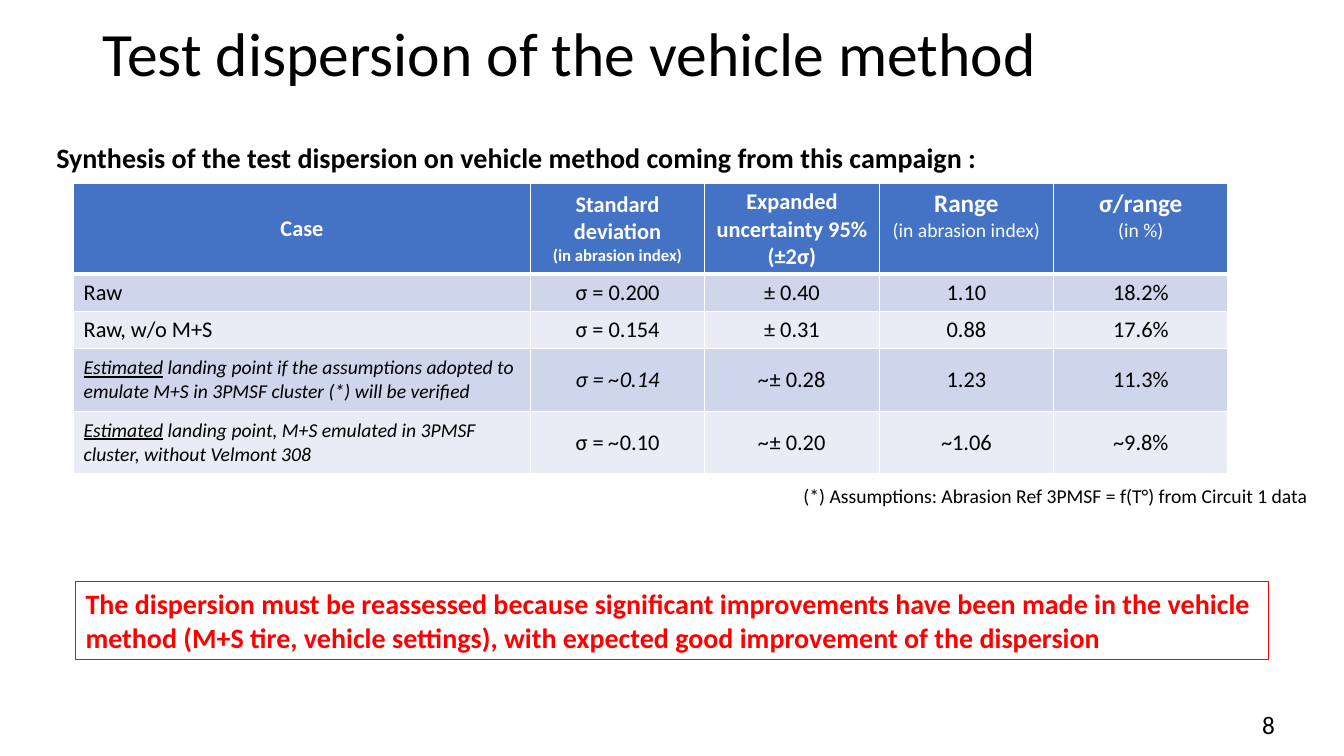
import pptx
import pptx.dml.color
import pptx.enum.shapes
import pptx.enum.text
import pptx.oxml
import pptx.util
from pptx.oxml.ns import nsdecls

WIDTH, HEIGHT = 13.33, 7.5
FONT = "Calibri"
COLOURS = {"ink": "000000", "paper": "FFFFFF", "header": "4472C4",
           "dark band": "CFD5EA", "light band": "E9EBF5", "alert": "FF0000"}
ALIGN = pptx.enum.text.PP_ALIGN
ANCHOR = pptx.enum.text.MSO_ANCHOR
inches = pptx.util.Inches

COLUMNS = [4.53] + [1.73] * 4
ROWS = [0.89, 0.37, 0.37, 0.62, 0.62]

# Each header is a list of lines: (text, size, bold)
HEADERS = [
    [("Case", 16, True)],
    [("Standard deviation", 16, True), ("(in abrasion index)", 12, True)],
    [("Expanded uncertainty 95%", 16, True), ("(±2σ)", 16, True)],
    [("Range", 18, True), ("(in abrasion index)", 14, False)],
    [("σ/range", 18, True), ("(in %)", 14, False)],
]
# A cell is a list of spans: (text, style letters)
CASES = [
    [[("Raw", "")], [("σ = 0.200", "")], [("± 0.40", "")], [("1.10", "")], [("18.2%", "")]],
    [[("Raw, w/o M+S", "")], [("σ = 0.154", "")], [("± 0.31", "")], [("0.88", "")],
     [("17.6%", "")]],
    [[("Estimated", "iu"), (" landing point if the assumptions adopted to emulate M+S "
                            "in 3PMSF cluster (*) will be verified", "i")],
     [("σ = ~0.14", "i")], [("~", "i"), ("± 0.28", "")], [("1.23", "")], [("11.3%", "")]],
    [[("Estimated", "iu"), (" landing point, M+S emulated in 3PMSF cluster, "
                            "without Velmont 308", "i")],
     [("σ = ", ""), ("~", "i"), ("0.10", "")], [("~", "i"), ("± 0.20", "")],
     [("~1.06", "")], [("~9.8%", "")]],
]


def rgb(name):
    return pptx.dml.color.RGBColor.from_string(COLOURS[name])


def style(span, size, colour="ink", bold=False, italic=False, underline=False):
    font = span.font
    font.name, font.size = FONT, pptx.util.Pt(size)
    font.bold, font.italic, font.underline = bold, italic, underline
    font.color.rgb = rgb(colour)


def add_text(page, area, text, size, colour="ink", bold=False, framed=False,
             anchor=ANCHOR.TOP, spacing=1.0):
    """Place one paragraph in an area given in inches."""
    place = [inches(value) for value in area]
    if framed:
        box = page.shapes.add_shape(pptx.enum.shapes.MSO_SHAPE.RECTANGLE, *place)
        box.shadow.inherit = False
        box.fill.background()
        box.line.color.rgb = rgb(colour)
        box.line.width = pptx.util.Pt(0.75)
    else:
        box = page.shapes.add_textbox(*place)
    frame = box.text_frame
    frame.text = text
    frame.word_wrap = True
    frame.vertical_anchor = anchor
    para = frame.paragraphs[0]
    para.alignment = ALIGN.LEFT
    para.line_spacing = spacing
    style(para.runs[0], size, colour, bold)


def set_borders(cell, row):
    """White rules all round, with a heavier one below the header row."""
    properties = cell._tc.get_or_add_tcPr()
    heavy = {0: "B", 1: "T"}.get(row)
    for index, side in enumerate("LRTB"):
        points = 3 if side == heavy else 1
        properties.insert(index, pptx.oxml.parse_xml(
            f'<a:ln{side} {nsdecls("a")} w="{pptx.util.Pt(points)}"><a:solidFill>'
            f'<a:srgbClr val="{COLOURS["paper"]}"/></a:solidFill></a:ln{side}>'))


def paint_cell(cell, row, colour, anchor):
    cell.fill.solid()
    cell.fill.fore_color.rgb = rgb(colour)
    cell.vertical_anchor = anchor
    set_borders(cell, row)


def fill_header(cell, column):
    lines = HEADERS[column]
    paint_cell(cell, 0, "header", ANCHOR.MIDDLE if column < 3 else ANCHOR.TOP)
    cell.text_frame.text = "\n".join(text for text, _, _ in lines)
    for para, (_, size, bold) in zip(cell.text_frame.paragraphs, lines):
        para.alignment = ALIGN.CENTER
        style(para.runs[0], size, "paper", bold)


def fill_case(cell, row, column, spans):
    paint_cell(cell, row, "dark band" if row % 2 else "light band", ANCHOR.MIDDLE)
    para = cell.text_frame.paragraphs[0]
    para.alignment = ALIGN.CENTER if column else ALIGN.LEFT
    size = 14 if column == 0 and len(spans) > 1 else 16
    for text, letters in spans:
        span = para.add_run()
        span.text = text
        style(span, size, italic="i" in letters, underline="u" in letters)


def add_dispersion_table(page, left, top):
    table = page.shapes.add_table(
        len(ROWS), len(COLUMNS), inches(left), inches(top),
        inches(sum(COLUMNS)), inches(sum(ROWS))).table
    for column, width in zip(table.columns, COLUMNS):
        column.width = inches(width)
    for row, height in zip(table.rows, ROWS):
        row.height = inches(height)
    for column in range(len(COLUMNS)):
        fill_header(table.cell(0, column), column)
        for row, case in enumerate(CASES, start=1):
            fill_case(table.cell(row, column), row, column, case[column])


def main():
    deck = pptx.Presentation()
    deck.slide_width, deck.slide_height = inches(WIDTH), inches(HEIGHT)
    page = deck.slides.add_slide(deck.slide_layouts[6])

    # Title and introduction
    add_text(page, (0.92, 0.02, 11.5, 1.08), "Test dispersion of the vehicle method", 44,
             anchor=ANCHOR.MIDDLE, spacing=0.9)
    add_text(page, (0.46, 1.34, 12.29, 0.77),
             "Synthesis of the test dispersion on vehicle method coming from this campaign :",
             20, bold=True)

    # Results and their footnote
    add_dispersion_table(page, 0.73, 1.82)
    add_text(page, (7.87, 4.75, 5.38, 0.34),
             "(*) Assumptions: Abrasion Ref 3PMSF = f(T°) from Circuit 1 data", 14)

    # Conclusion and page number
    add_text(page, (0.75, 5.77, 11.83, 0.77),
             "The dispersion must be reassessed because significant improvements have been "
             "made in the vehicle method (M+S tire, vehicle settings), with expected good "
             "improvement of the dispersion", 20, "alert", bold=True, framed=True)
    add_text(page, (12.42, 6.99, 0.46, 0.4), "8", 18)

    deck.save("out.pptx")


if __name__ == "__main__":
    main()
